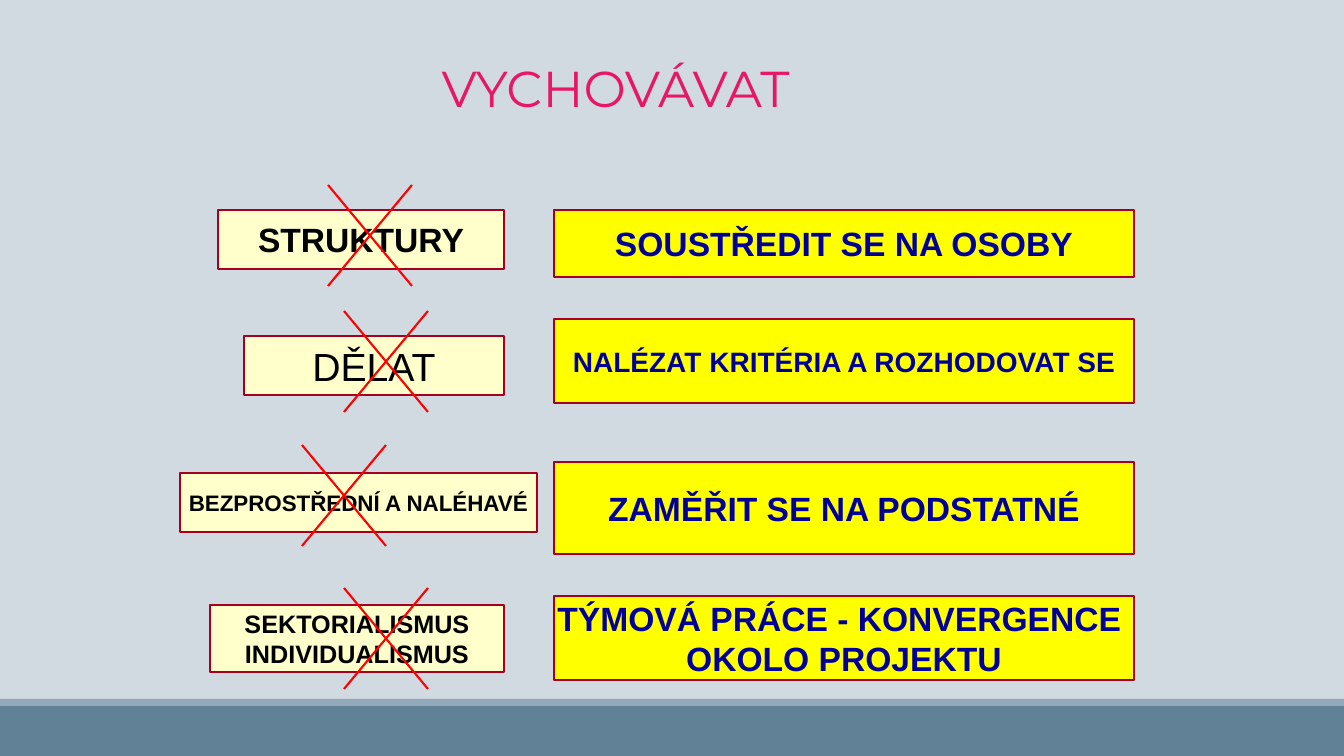
from dataclasses import dataclass

from lxml.etree import SubElement
from pptx import Presentation
from pptx.dml.color import RGBColor
from pptx.enum.shapes import MSO_CONNECTOR, MSO_SHAPE
from pptx.enum.text import MSO_ANCHOR, PP_ALIGN
from pptx.oxml.ns import qn
from pptx.util import Emu, Pt

EMU_PER_PX = 12192000 / 1344


@dataclass(frozen=True)
class Theme:
    background: str = "D1D9E1"
    band: str = "618197"
    band_edge: str = "92A9B9"
    title: str = "E81766"
    border: str = "A50021"
    rejected_fill: str = "FFFFCC"
    rejected_text: str = "000000"
    preferred_fill: str = "FFFF00"
    preferred_text: str = "000099"
    cross: str = "FF0000"
    title_font: str = "Montserrat"
    body_font: str = "Arial"
    title_size: int = 36
    huge: int = 28
    large: int = 24
    medium: int = 20
    small: int = 18
    tiny: int = 16
    line_width: float = 1.5


THEME = Theme()
PREFERRED_LEFT, PREFERRED_WIDTH = 554, 580
CROSS_WIDTH, CROSS_HEIGHT = 84, 101

ROWS = [
    dict(rejected=["STRUKTURY"], rejected_box=(218, 210, 286, 59),
         rejected_size=THEME.large, bold=True, cross=(328, 185),
         preferred=["SOUSTŘEDIT SE NA OSOBY"], top=210, height=67,
         preferred_size=THEME.large),
    dict(rejected=["DĚLAT"], rejected_box=(244, 336, 260, 59),
         rejected_size=THEME.huge, bold=False, cross=(344, 311),
         preferred=["NALÉZAT KRITÉRIA A ROZHODOVAT SE"], top=319, height=84,
         preferred_size=THEME.medium),
    dict(rejected=["BEZPROSTŘEDNÍ A NALÉHAVÉ"], rejected_box=(180, 473, 357, 59),
         rejected_size=THEME.tiny, bold=True, cross=(302, 445),
         preferred=["ZAMĚŘIT SE NA PODSTATNÉ"], top=462, height=92,
         preferred_size=THEME.large),
    dict(rejected=["SEKTORIALISMUS", "INDIVIDUALISMUS"],
         rejected_box=(210, 605, 294, 67),
         rejected_size=THEME.small, bold=True, cross=(344, 588),
         preferred=["TÝMOVÁ PRÁCE - KONVERGENCE ", "OKOLO PROJEKTU"],
         top=596, height=84, preferred_size=THEME.large),
]


def px(length):
    return Emu(round(length * EMU_PER_PX))


def color(value):
    return RGBColor.from_string(value)


def write_text(shape, lines, *, font, size, fill, bold=False,
               anchor=MSO_ANCHOR.MIDDLE):
    frame = shape.text_frame
    frame.word_wrap = False
    frame.vertical_anchor = anchor
    for index, line in enumerate(lines):
        paragraph = frame.add_paragraph() if index else frame.paragraphs[0]
        paragraph.alignment = PP_ALIGN.CENTER
        run = paragraph.add_run()
        run.text = line
        run.font.name = font
        run.font.size = Pt(size)
        run.font.bold = bold
        run.font.color.rgb = color(fill)


def add_rectangle(slide, box, fill, border=None):
    shape = slide.shapes.add_shape(MSO_SHAPE.RECTANGLE, *map(px, box))
    shape.shadow.inherit = False
    shape.fill.solid()
    shape.fill.fore_color.rgb = color(fill)
    if border:
        shape.line.color.rgb = color(border)
        shape.line.width = Pt(THEME.line_width)
    else:
        shape.line.fill.background()
    return shape


def add_cross(slide, box):
    left, top, width, height = box
    right, bottom = left + width, top + height
    group = slide.shapes.add_group_shape()
    for start, end in ((left, right), (right, left)):
        stroke = group.shapes.add_connector(
            MSO_CONNECTOR.STRAIGHT, px(start), px(bottom), px(end), px(top))
        stroke.line.color.rgb = color(THEME.cross)
        stroke.line.width = Pt(THEME.line_width)
        SubElement(stroke._element.spPr, qn("a:effectLst"))


def add_title(slide, box, text):
    title = slide.shapes.title
    title.left, title.top, title.width, title.height = map(px, box)
    write_text(title, [text], font=THEME.title_font, size=THEME.title_size,
               fill=THEME.title, anchor=MSO_ANCHOR.TOP)


def add_footer_band(slide, box):
    left, top, width, height = box
    edge = 7
    add_rectangle(slide, (left, top + edge, width, height - edge), THEME.band)
    add_rectangle(slide, (left, top, width, edge), THEME.band_edge)


def add_row(slide, row):
    rejected = add_rectangle(slide, row["rejected_box"], THEME.rejected_fill,
                             THEME.border)
    write_text(rejected, row["rejected"], font=THEME.body_font,
               size=row["rejected_size"], fill=THEME.rejected_text,
               bold=row["bold"])
    preferred = add_rectangle(
        slide, (PREFERRED_LEFT, row["top"], PREFERRED_WIDTH, row["height"]),
        THEME.preferred_fill, THEME.border)
    write_text(preferred, row["preferred"], font=THEME.body_font,
               size=row["preferred_size"], fill=THEME.preferred_text, bold=True)
    add_cross(slide, (*row["cross"], CROSS_WIDTH, CROSS_HEIGHT))


def main():
    presentation = Presentation()
    presentation.slide_width, presentation.slide_height = px(1344), px(756)
    slide = presentation.slides.add_slide(presentation.slide_layouts[5])
    slide.background.fill.solid()
    slide.background.fill.fore_color.rgb = color(THEME.background)
    add_footer_band(slide, (0, 699, 1344, 57))
    add_title(slide, (347, 52, 537, 118), "VYCHOVÁVAT")
    for row in ROWS:
        add_row(slide, row)
    presentation.save("out.pptx")


if __name__ == "__main__":
    main()
